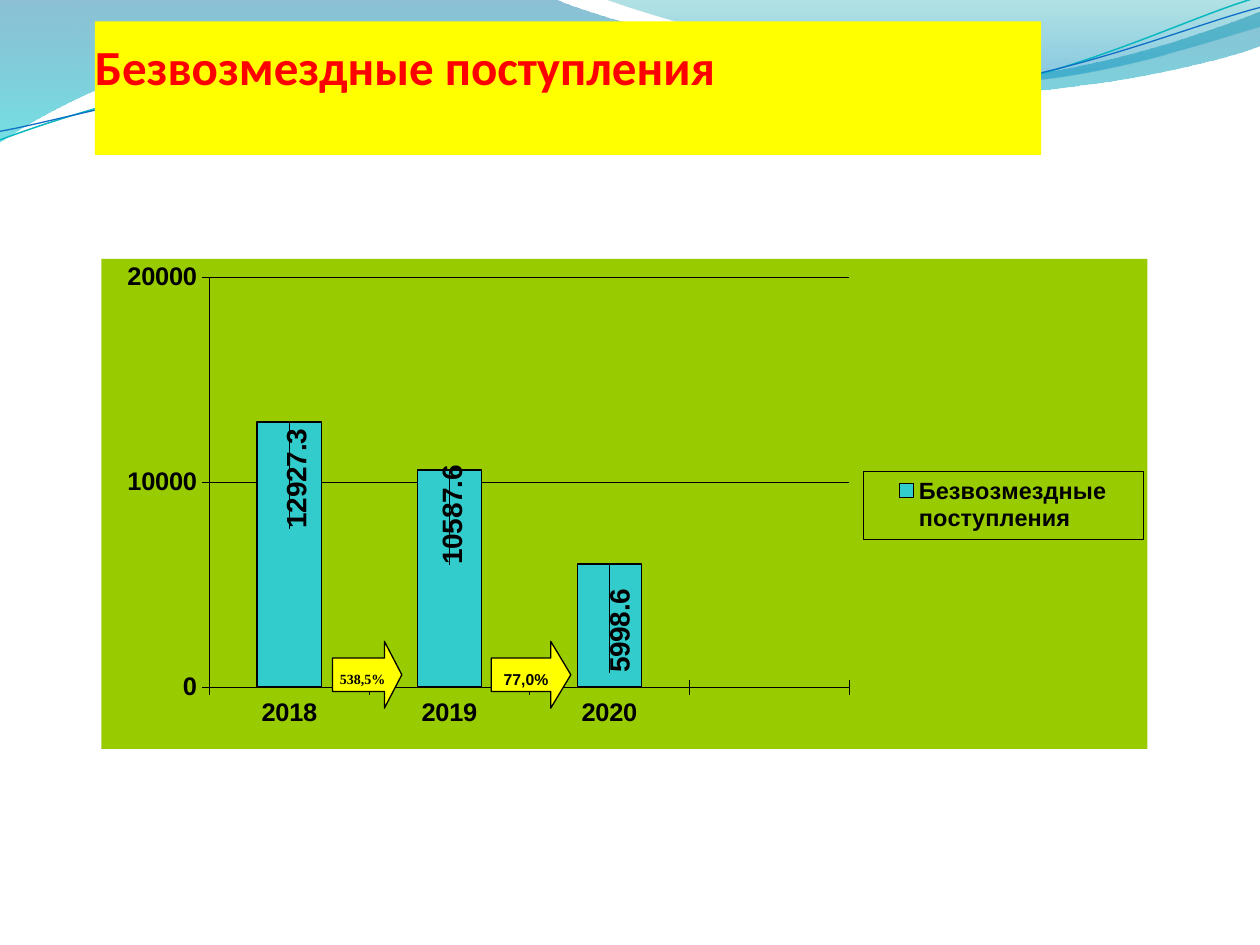
from lxml import etree
from pptx import Presentation
from pptx.chart.data import CategoryChartData
from pptx.dml.color import RGBColor
from pptx.enum.chart import (XL_CHART_TYPE, XL_LABEL_POSITION, XL_LEGEND_POSITION,
                             XL_TICK_LABEL_POSITION, XL_TICK_MARK)
from pptx.enum.shapes import MSO_SHAPE
from pptx.enum.text import MSO_ANCHOR, MSO_AUTO_SIZE, PP_ALIGN
from pptx.oxml import parse_xml
from pptx.oxml.ns import nsdecls, qn
from pptx.util import Pt

COLUMN = XL_CHART_TYPE.COLUMN_CLUSTERED
INSIDE = XL_LABEL_POSITION.INSIDE_END
RIGHT = XL_LEGEND_POSITION.RIGHT
LOW = XL_TICK_LABEL_POSITION.LOW
CROSS, NONE = XL_TICK_MARK.CROSS, XL_TICK_MARK.NONE
ARROW = MSO_SHAPE.RIGHT_ARROW
MIDDLE, BOTTOM = MSO_ANCHOR.MIDDLE, MSO_ANCHOR.BOTTOM
FIXED = MSO_AUTO_SIZE.NONE
LEFT, CENTER = PP_ALIGN.LEFT, PP_ALIGN.CENTER

HEX = {
    "black": "000000", "red": "FF0000", "yellow": "FFFF00",
    "green": "99CC00", "bar": "33CCCC", "teal": "0AB8BF", "blue": "0F6FC6",
    "deep": "0074A1", "aqua": "00C6CF", "sea": "00A1A9", "sky": "008BBF",
}

TITLE = "Безвозмездные поступления"
YEARS = ["2018", "2019", "2020", ""]
SUMS = [12927.3, 10587.6, 5998.6, None]
SHIFTS = [(0.007, 0.004), (0.003, -0.02), (0.01, 0.04)]
ARROWS = [
    ("538,5%", 190, 39.6, 0.26, 8, "Times New Roman"),
    ("77,0%", 280.7, 45.5, 0.3, 9, "Arial"),
]
BANDS = [
    ([(0, -0.7), (316.8, -0.7), (342.7, 12.2, 478.1, 45.4, 545.8, 45.4),
      (614.2, 45.4, 689.8, 18.7, 720, 6.5), (720.7, 25.9),
      (707.8, 31.7, 626.4, 54.7, 537.1, 54),
      (447.8, 54, 275, 20.2, 185, 24.5), (92.9, 25.2, 33.1, 59.8, -0.7, 81.4),
      (0, -0.7)],
     [(0, "deep", 45), (1, "aqua", 55)]),
    ([(344.9, -0.7), (366.5, 7.9, 491, 44.6, 553.7, 46.8),
      (616.3, 49.7, 691.9, 23, 720, 15.1), (720, 0), (344.9, -0.7)],
     [(0, "sea", 30), (0.8, "sky", 45)]),
]
TILT = 357.3
LINES = [
    ([(-1.4, 63), (33.8, 51.7, 114.1, 29.4, 199.8, 29.9),
      (284.8, 30.3, 425.8, 67.3, 512.4, 64.8), (599.1, 62.4, 676.4, 25.7, 720.2, 15.5)],
     "teal", 0.85),
    ([(-1.1, 58), (32.9, 53.8, 118.3, 32.5, 204.1, 33),
      (290.6, 33.4, 428.9, 63.1, 515.5, 61.4), (601.4, 59.6, 678.5, 30.1, 721.4, 21.3)],
     "blue", 0.75),
]


def rgb(name):
    return RGBColor.from_string(HEX[name])


def paint(item, name):
    item.fill.solid()
    item.fill.fore_color.rgb = rgb(name)


def stroke(line, name, width):
    line.color.rgb = rgb(name)
    line.width = Pt(width)


def style(font, size, name="black", face="Arial"):
    font.size, font.bold, font.name = Pt(size), True, face
    font.color.rgb = rgb(name)


def curve(shapes, route, close):
    dots = [(Pt(seg[i]), Pt(seg[i + 1])) for seg in route for i in range(0, len(seg), 2)]
    pen = shapes.build_freeform(*dots[0], scale=1.0)
    pen.add_line_segments(dots[1:], close=close)
    shape = pen.convert_to_shape()
    shape.shadow.inherit = False
    steps = iter(list(shape.element.iter(qn("a:lnTo"))))
    for seg in route[1:]:
        first = next(steps)
        if len(seg) == 6:
            first.tag = qn("a:cubicBezTo")
            for _ in range(2):
                step = next(steps)
                first.append(step[0])
                step.getparent().remove(step)
    return shape


def add_waves(slide):
    for route, stops in BANDS:
        band = curve(slide.shapes, route, True)
        band.line.fill.background()
        band.fill.gradient()
        band.fill.gradient_angle = 270
        for stop, (spot, name, alpha) in zip(band.fill.gradient_stops, stops):
            stop.position = spot
            stop.color.rgb = rgb(name)
        for tint, (_, _, alpha) in zip(band.element.spPr.iter(qn("a:srgbClr")), stops):
            etree.SubElement(tint, qn("a:alpha")).set("val", str(alpha * 1000))
    group = slide.shapes.add_group_shape()
    for route, name, width in LINES:
        wave = curve(group.shapes, route, False)
        wave.rotation = TILT
        wave.fill.background()
        stroke(wave.line, name, width)


def add_title(slide):
    title = slide.shapes.title
    title.element.getparent().append(title.element)
    title.left, title.top, title.width, title.height = Pt(54.2), Pt(12.2), Pt(540.7), Pt(76.3)
    paint(title, "yellow")
    frame = title.text_frame
    frame.text = TITLE
    frame.auto_size, frame.vertical_anchor, frame.word_wrap = FIXED, BOTTOM, True
    frame.margin_left = frame.margin_right = 0
    frame.margin_top, frame.margin_bottom = Pt(3.6), Pt(34)
    para = frame.paragraphs[0]
    para.alignment = LEFT
    style(para.runs[0].font, 28, "red", "Calibri")


def layout(modes, **sizes):
    parts = [f'<c:{key} val="{val}"/>' for key, val in [*modes, *sizes.items()]]
    return parse_xml(f'<c:layout {nsdecls("c")}><c:manualLayout>{"".join(parts)}'
                     '</c:manualLayout></c:layout>')


def place(owner, spot, node):
    for old in owner.findall(qn("c:layout")):
        owner.remove(old)
    owner.insert(spot, node)


def add_labels(bars):
    labels = bars.data_labels
    labels.show_value = True
    style(labels.font, 16)
    for i, (x, y) in enumerate(SHIFTS):
        label = bars.points[i].data_label
        style(label.font, 16)
        label.position = INSIDE
    root = bars.data_labels._element
    for node, (x, y) in zip(root.iter(qn("c:dLbl")), SHIFTS):
        place(node, 1, layout([], x=x, y=y))
    for body in root.iter(qn("a:bodyPr")):
        body.set("rot", "-5400000")
        body.set("vert", "horz")
    for old in root.findall(qn("c:showLeaderLines")):
        root.remove(old)
    root.append(parse_xml(
        f'<c:extLst {nsdecls("c")}><c:ext uri="{{CE6537A1-D6FC-4f65-9D91-7224C49458BB}}" '
        'xmlns:c15="http://schemas.microsoft.com/office/drawing/2012/chart">'
        '<c15:showLeaderLines val="0"/></c:ext></c:extLst>'))


def add_chart(slide):
    data = CategoryChartData()
    data.categories = YEARS
    data.add_series(TITLE, SUMS)
    chart = slide.shapes.add_chart(COLUMN, Pt(58), Pt(148), Pt(597.7), Pt(280), data).chart
    chart.has_title = False
    style(chart.font, 14.5)
    root = chart.element
    root.find(qn("c:chart")).addnext(parse_xml(
        f'<c:spPr {nsdecls("c", "a")}><a:solidFill><a:srgbClr val="{HEX["green"]}"/>'
        '</a:solidFill><a:ln><a:noFill/></a:ln></c:spPr>'))
    edge = [("xMode", "edge"), ("yMode", "edge")]
    place(root.find(".//" + qn("c:plotArea")), 0,
          layout([("layoutTarget", "inner"), *edge], x=0.103, y=0.037, w=0.612, h=0.837))

    for axis in (chart.category_axis, chart.value_axis):
        axis.major_tick_mark, axis.minor_tick_mark = CROSS, NONE
        stroke(axis.format.line, "black", 0.2)
        style(axis.tick_labels.font, 14.5)
    chart.category_axis.tick_label_position = LOW
    scale = chart.value_axis
    scale.minimum_scale, scale.maximum_scale, scale.major_unit = 0, 20000, 10000
    scale.has_major_gridlines = True
    stroke(scale.major_gridlines.format.line, "black", 0.2)

    plot = chart.plots[0]
    plot.gap_width, plot.vary_by_categories = 150, False
    bars = plot.series[0]
    paint(bars.format, "bar")
    stroke(bars.format.line, "black", 0.81)
    add_labels(bars)

    chart.has_legend = True
    key = chart.legend
    key.position, key.include_in_layout = RIGHT, False
    style(key.font, 13.4)
    node = root.find(".//" + qn("c:legend"))
    place(node, 1, layout(edge, x=0.728, y=0.433, w=0.268, h=0.139))
    node.find(qn("c:txPr")).addprevious(parse_xml(
        f'<c:spPr {nsdecls("c", "a")}><a:noFill/><a:ln w="{Pt(0.2)}"><a:solidFill>'
        f'<a:srgbClr val="{HEX["black"]}"/></a:solidFill></a:ln></c:spPr>'))


def add_arrows(slide):
    for text, left, width, head, size, face in ARROWS:
        arrow = slide.shapes.add_shape(ARROW, Pt(left), Pt(366.5), Pt(width), Pt(38.2))
        arrow.shadow.inherit = False
        arrow.adjustments[1] = head
        paint(arrow, "yellow")
        stroke(arrow.line, "black", 0.75)
        frame = arrow.text_frame
        frame.text = text
        frame.word_wrap, frame.vertical_anchor = False, MIDDLE
        frame.margin_top, frame.margin_bottom = Pt(5), 0
        para = frame.paragraphs[0]
        para.alignment = CENTER
        style(para.runs[0].font, size, face=face)


def main():
    deck = Presentation()
    deck.slide_width, deck.slide_height = Pt(720), Pt(540)
    slide = deck.slides.add_slide(deck.slide_layouts[5])
    for add in (add_waves, add_title, add_chart, add_arrows):
        add(slide)
    deck.save("out.pptx")


if __name__ == "__main__":
    main()
